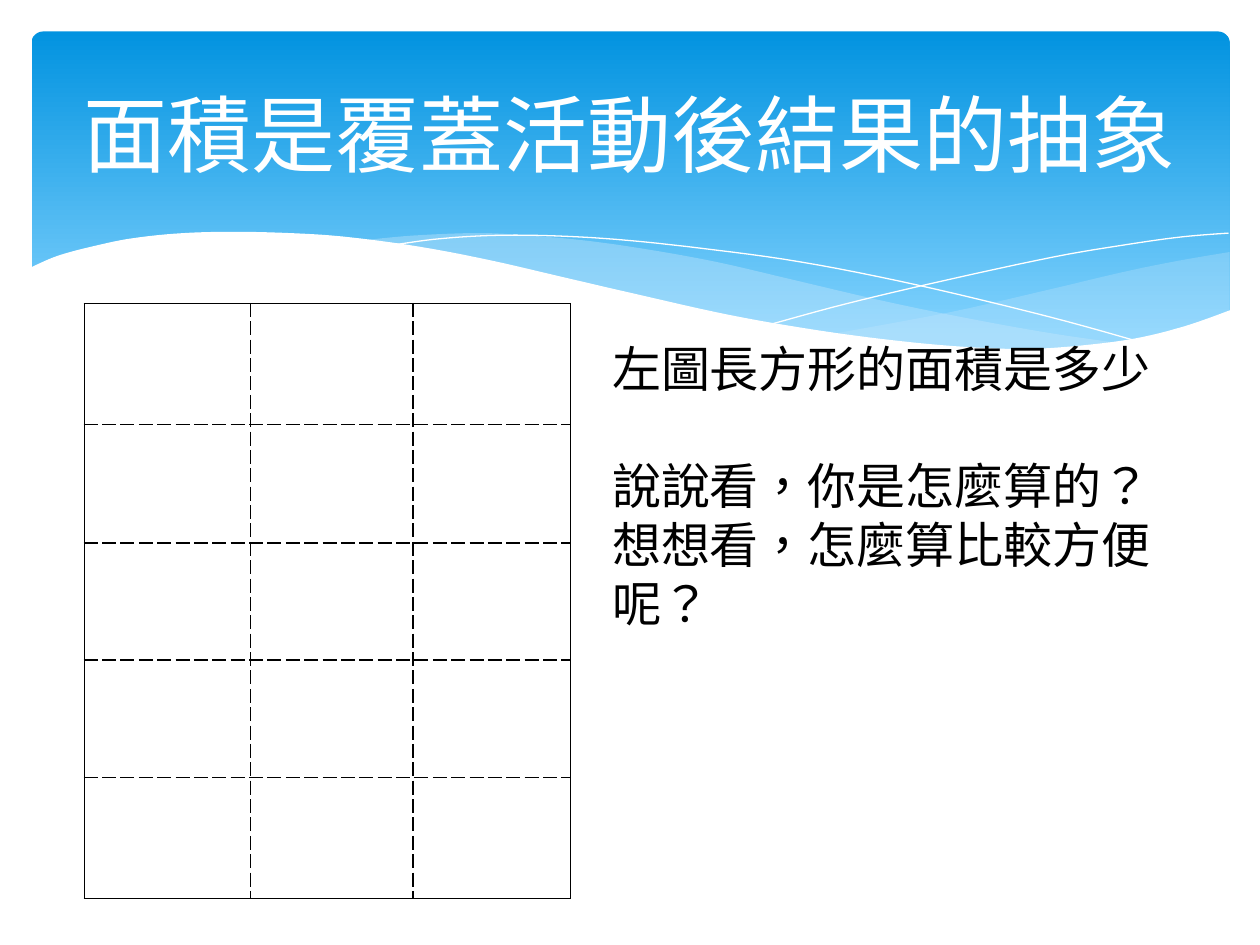
from dataclasses import dataclass

from lxml import etree
from pptx import Presentation
from pptx.dml.color import RGBColor
from pptx.enum.shapes import MSO_SHAPE
from pptx.enum.text import MSO_ANCHOR, PP_ALIGN
from pptx.oxml.ns import qn
from pptx.util import Inches, Pt


@dataclass(frozen=True)
class Theme:
    white: str = "FFFFFF"
    black: str = "000000"
    banner_top: str = "0293E0"
    banner_bottom: str = "83D3FE"
    wave: str = "C6E7FC"
    title_font: str = "Calibri"
    body_font: str = "Noto Sans CJK SC"
    language: str = "zh-TW"
    title_size: float = 48
    body_size: float = 28
    border_width: float = 1


def color(value):
    return RGBColor.from_string(value)


def smooth(knots, steps=6):
    """Points of a Catmull-Rom curve through the knots."""
    padded = [knots[0], *knots, knots[-1]]
    points = [knots[0]]
    for a, b, c, d in zip(padded, padded[1:], padded[2:], padded[3:]):
        for step in range(1, steps + 1):
            t = step / steps
            points.append(tuple(
                0.5 * (2 * q + (r - p) * t + (2 * p - 5 * q + 4 * r - s) * t ** 2
                       + (3 * q - p - 3 * r + s) * t ** 3)
                for p, q, r, s in zip(a, b, c, d)))
    return points


def write_text(frame, lines, *, font, size, fill, language, align=PP_ALIGN.LEFT,
               gap_after_first=0, margin_right=0.1, margin_bottom=0.05):
    frame.word_wrap = True
    frame.vertical_anchor = MSO_ANCHOR.MIDDLE
    frame.margin_right = Inches(margin_right)
    frame.margin_bottom = Inches(margin_bottom)
    for index, line in enumerate(lines):
        paragraph = frame.add_paragraph() if index else frame.paragraphs[0]
        paragraph.alignment = align
        paragraph.space_after = Pt(0 if index else gap_after_first)
        run = paragraph.add_run()
        run.text = line
        run.font.name = font
        run.font.size = Pt(size)
        run.font.color.rgb = color(fill)
        run._r.get_or_add_rPr().set("lang", language)


class SlideBuilder:
    def __init__(self, slide, theme):
        self.slide = slide
        self.theme = theme

    def banner(self, left, top, width, height):
        shape = self.slide.shapes.add_shape(
            MSO_SHAPE.ROUNDED_RECTANGLE, Inches(left), Inches(top),
            Inches(width), Inches(height))
        shape.adjustments[0] = 0.034
        shape.shadow.inherit = False
        shape.line.fill.background()
        shape.fill.gradient()
        shape.fill.gradient_angle = 270
        stops = ((0, self.theme.banner_top), (0.9, self.theme.banner_bottom))
        for stop, (position, value) in zip(shape.fill.gradient_stops, stops):
            stop.position = position
            stop.color.rgb = color(value)

    def outline(self, points, close):
        start, *rest = [(Inches(x), Inches(y)) for x, y in points]
        builder = self.slide.shapes.build_freeform(*start)
        builder.add_line_segments(rest, close=close)
        shape = builder.convert_to_shape()
        shape.shadow.inherit = False
        return shape

    def area(self, points, fill, opacity=100):
        shape = self.outline(points, close=True)
        shape.line.fill.background()
        shape.fill.solid()
        shape.fill.fore_color.rgb = color(fill)
        if opacity < 100:
            rgb = shape.fill._xPr.find(f"{qn('a:solidFill')}/{qn('a:srgbClr')}")
            etree.SubElement(rgb, qn("a:alpha"), val=str(opacity * 1000))

    def curve(self, knots):
        shape = self.outline(smooth(knots), close=False)
        shape.fill.background()
        shape.line.color.rgb = color(self.theme.white)
        shape.line.width = Pt(0)

    def text(self, left, top, width, height, lines, **style):
        box = self.slide.shapes.add_textbox(
            Inches(left), Inches(top), Inches(width), Inches(height))
        write_text(box.text_frame, lines, language=self.theme.language, **style)

    def border(self, cell, side, dash):
        line = etree.SubElement(cell._tc.get_or_add_tcPr(), qn(f"a:ln{side}"),
                                w=str(Pt(self.theme.border_width)))
        fill = etree.SubElement(line, qn("a:solidFill"))
        etree.SubElement(fill, qn("a:srgbClr"), val=self.theme.black)
        etree.SubElement(line, qn("a:prstDash"), val=dash)

    def unit_grid(self, left, top, widths, heights):
        """Empty table with a solid frame and dashed inner lines."""
        table = self.slide.shapes.add_table(
            len(heights), len(widths), Inches(left), Inches(top),
            Inches(sum(widths)), Inches(sum(heights))).table
        table.first_row = table.horz_banding = False
        for column, width in zip(table.columns, widths):
            column.width = Inches(width)
        for row, height in zip(table.rows, heights):
            row.height = Inches(height)
        last_row, last_column = len(heights) - 1, len(widths) - 1
        for r in range(len(heights)):
            for c in range(len(widths)):
                cell = table.cell(r, c)
                on_frame = {"L": c == 0, "R": c == last_column,
                            "T": r == 0, "B": r == last_row}
                for side, solid in on_frame.items():
                    self.border(cell, side, "solid" if solid else "dash")
                cell.fill.background()


RIGHT_WAVE_TOP = [(9.76, 2), (9.35, 2.07), (8.91, 2.16), (8.32, 2.3),
                  (7.53, 2.48), (6.61, 2.65)]
RIGHT_WAVE_BOTTOM = [(6.61, 2.65), (7.05, 2.71), (7.57, 2.76), (8.03, 2.78),
                     (8.54, 2.76), (9.05, 2.69), (9.42, 2.59), (9.76, 2.47)]
MIDDLE_WAVE_TOP = [(8.93, 2.73), (8.37, 2.65), (7.75, 2.54), (7.06, 2.4),
                   (6.29, 2.22), (5.69, 2.08), (5.14, 1.98), (4.65, 1.91),
                   (4.2, 1.87), (3.8, 1.85), (3.28, 1.87), (2.86, 1.91)]
MIDDLE_WAVE_BOTTOM = [(2.86, 1.91), (3.42, 1.99), (4.04, 2.11), (4.49, 2.22),
                      (5.3, 2.4), (6.01, 2.55), (6.65, 2.66), (7.22, 2.74),
                      (7.73, 2.77), (8.18, 2.78), (8.57, 2.77), (8.93, 2.73)]
FALLING_CURVE = [(3.09, 1.95), (3.44, 1.9), (3.87, 1.87), (4.33, 1.87),
                 (4.89, 1.9), (5.56, 1.97), (6.36, 2.08), (7.27, 2.26),
                 (8.31, 2.51), (9.07, 2.72)]
RISING_CURVE = [(6.13, 2.57), (6.72, 2.41), (7.48, 2.23), (8.36, 2.04),
                (8.95, 1.94), (9.38, 1.88), (9.75, 1.85)]
PAPER_EDGE = [(9.77, 2.46), (9.4, 2.59), (8.99, 2.69), (8.5, 2.75),
              (8.09, 2.77), (7.61, 2.75), (7.08, 2.7), (6.48, 2.62),
              (5.79, 2.5), (5.03, 2.33), (4.47, 2.2), (3.91, 2.07),
              (3.4, 1.97), (2.92, 1.9), (2.5, 1.86), (1.93, 1.84),
              (1.46, 1.85), (1.06, 1.89), (0.76, 1.95), (0.46, 2.03),
              (0.23, 2.13)]


def main():
    presentation = Presentation()
    presentation.slide_width = Inches(10)
    presentation.slide_height = Inches(7.5)
    theme = Theme()
    slide = presentation.slides.add_slide(presentation.slide_layouts[6])
    page = SlideBuilder(slide, theme)

    page.banner(0.25, 0.25, 9.51, 2.7)
    page.area(smooth(RIGHT_WAVE_TOP) + smooth(RIGHT_WAVE_BOTTOM), theme.wave, 29)
    page.area(smooth(MIDDLE_WAVE_TOP) + smooth(MIDDLE_WAVE_BOTTOM), theme.wave, 40)
    page.curve(FALLING_CURVE)
    page.curve(RISING_CURVE)
    page.area(smooth(PAPER_EDGE) + [(0.23, 3.29), (9.77, 3.29)], theme.white)

    page.unit_grid(0.67, 2.41, widths=[1.32, 1.29, 1.25],
                   heights=[0.96, 0.94, 0.93, 0.93, 0.96])
    page.text(0.5, 0.37, 9, 1.37, ["面積是覆蓋活動後結果的抽象"],
              font=theme.title_font, size=theme.title_size, fill=theme.white,
              align=PP_ALIGN.CENTER)
    page.text(4.76, 2.46, 4.96, 2.86,
              ["左圖長方形的面積是多少", "說說看，你是怎麼算的？",
               "想想看，怎麼算比較方便呢？"],
              font=theme.body_font, size=theme.body_size, fill=theme.black,
              gap_after_first=33.5, margin_right=0.25, margin_bottom=0.13)

    presentation.save("out.pptx")


if __name__ == "__main__":
    main()
